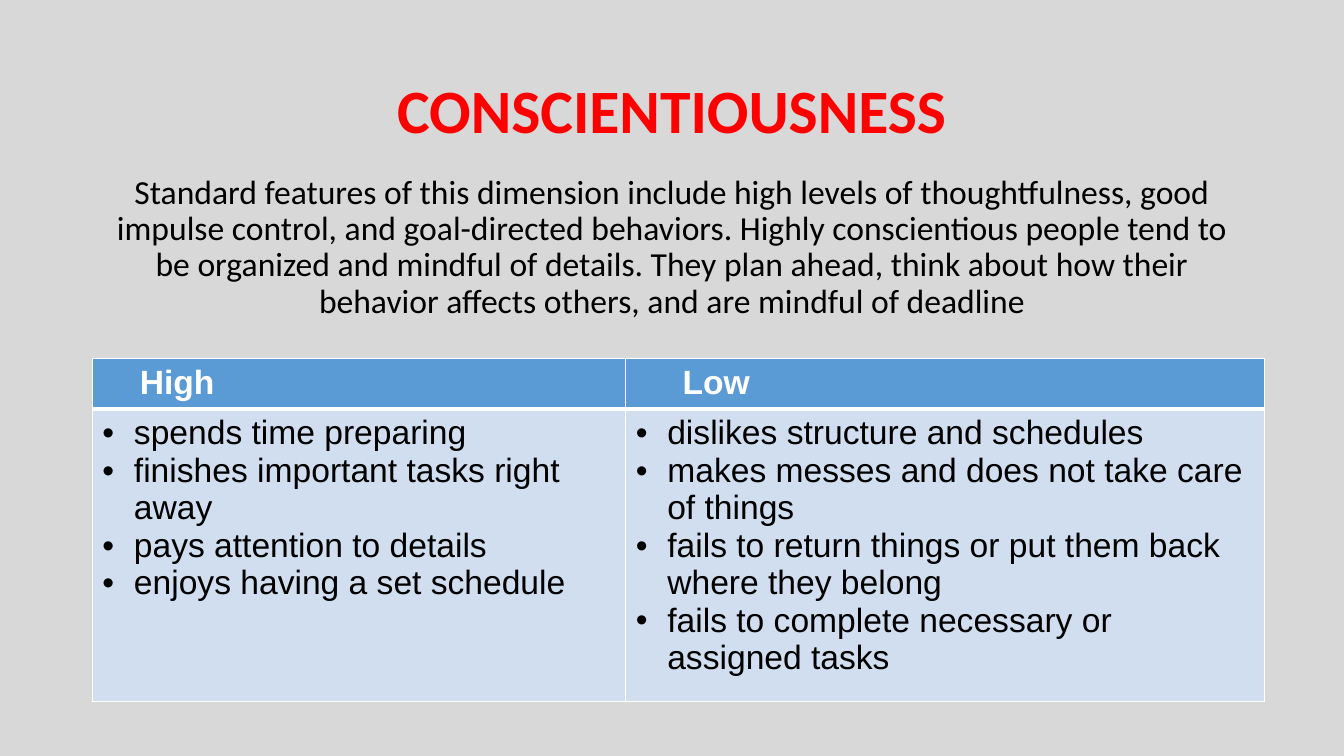
from lxml import etree
from pptx import Presentation
from pptx.dml.color import RGBColor
from pptx.enum.text import MSO_ANCHOR, PP_ALIGN
from pptx.oxml.ns import qn
from pptx.util import Pt

CENTER = PP_ALIGN.CENTER
TOP, MIDDLE = MSO_ANCHOR.TOP, MSO_ANCHOR.MIDDLE

TITLE = "CONSCIENTIOUSNESS"
SUMMARY = (
    "Standard features of this dimension include high levels of thoughtfulness, "
    "good impulse control, and goal-directed behaviors. Highly conscientious people "
    "tend to be organized and mindful of details. They plan ahead, think about how "
    "their behavior affects others, and are mindful of deadline"
)
# heading, heading indent, column width, traits
COLUMNS = [
    ("High", 26.7, 381, [
        "spends time preparing",
        "finishes important tasks right away",
        "pays attention to details",
        "enjoys having a set schedule",
    ]),
    ("Low", 33.4, 456, [
        "dislikes structure and schedules",
        "makes messes and does not take care of things",
        "fails to return things or put them back where they belong",
        "fails to complete necessary or assigned tasks",
    ]),
]

COLORS = {"background": "D8D8D8", "title": "FF0000", "text": "000000",
          "header": "5B9BD5", "body": "D0DEEF", "white": "FFFFFF"}
FORMATS = {
    "title": {"name": "Calibri", "size": Pt(44), "bold": True},
    "summary": {"name": "Calibri", "size": Pt(24), "bold": False},
    "header": {"name": "Arial", "size": Pt(24), "bold": True},
    "trait": {"name": "Arial", "size": Pt(24), "bold": False},
}
LEFT, TEXT_WIDTH = 66, 828
TABLE_TOP, ROW_HEIGHTS = 256.3, (33.8, 194.6)
INSET, BULLET_INDENT = 7.2, 22.5


def add_run(p, text, style, color):
    r = p.add_run()
    r.text = text
    for name, value in FORMATS[style].items():
        setattr(r.font, name, value)
    r.font.color.rgb = RGBColor.from_string(COLORS[color])


def add_centered_text(s, text, top, height, anchor, style, color):
    tf = s.shapes.add_textbox(Pt(LEFT), Pt(top), Pt(TEXT_WIDTH), Pt(height)).text_frame
    tf.word_wrap = True
    tf.vertical_anchor = anchor
    p = tf.paragraphs[0]
    p.alignment = CENTER
    p.line_spacing = 0.9
    add_run(p, text, style, color)


def style_cell(cell, fill, widths):
    """Fill a cell and give it white borders, widths keyed by side."""
    cell.fill.solid()
    cell.fill.fore_color.rgb = RGBColor.from_string(COLORS[fill])
    tc_pr = cell._tc.get_or_add_tcPr()
    for i, side in enumerate("LRTB"):
        ln = etree.Element(qn(f"a:ln{side}"), w=str(Pt(widths.get(side, 1))))
        solid = etree.SubElement(ln, qn("a:solidFill"))
        etree.SubElement(solid, qn("a:srgbClr"), val=COLORS["white"])
        tc_pr.insert(i, ln)


def add_bullet(p):
    p_pr = p._p.get_or_add_pPr()
    p_pr.set("marL", str(Pt(BULLET_INDENT)))
    p_pr.set("indent", str(-Pt(BULLET_INDENT)))
    etree.SubElement(p_pr, qn("a:buFont"), typeface="Arial")
    etree.SubElement(p_pr, qn("a:buChar"), char="•")


def add_trait_table(s):
    width = sum(column[2] for column in COLUMNS)
    table = s.shapes.add_table(2, len(COLUMNS), Pt(LEFT), Pt(TABLE_TOP),
                               Pt(width), Pt(sum(ROW_HEIGHTS))).table
    for row, height in zip(table.rows, ROW_HEIGHTS):
        row.height = Pt(height)
    for c, (heading, indent, col_width, traits) in enumerate(COLUMNS):
        table.columns[c].width = Pt(col_width)
        header, body = table.cell(0, c), table.cell(1, c)
        style_cell(header, "header", {"B": 3})
        style_cell(body, "body", {"T": 3})
        header.margin_left = Pt(INSET + indent)
        add_run(header.text_frame.paragraphs[0], heading, "header", "white")
        tf = body.text_frame
        for i, trait in enumerate(traits):
            p = tf.add_paragraph() if i else tf.paragraphs[0]
            add_bullet(p)
            add_run(p, trait, "trait", "text")


def main():
    prs = Presentation()
    prs.slide_width, prs.slide_height = Pt(960), Pt(540)
    s = prs.slides.add_slide(prs.slide_layouts[6])
    s.background.fill.solid()
    s.background.fill.fore_color.rgb = RGBColor.from_string(COLORS["background"])
    add_centered_text(s, TITLE, 28.75, 104.4, MIDDLE, "title", "title")
    add_centered_text(s, SUMMARY, 121.7, 365, TOP, "summary", "text")
    add_trait_table(s)
    prs.save("out.pptx")


if __name__ == "__main__":
    main()
